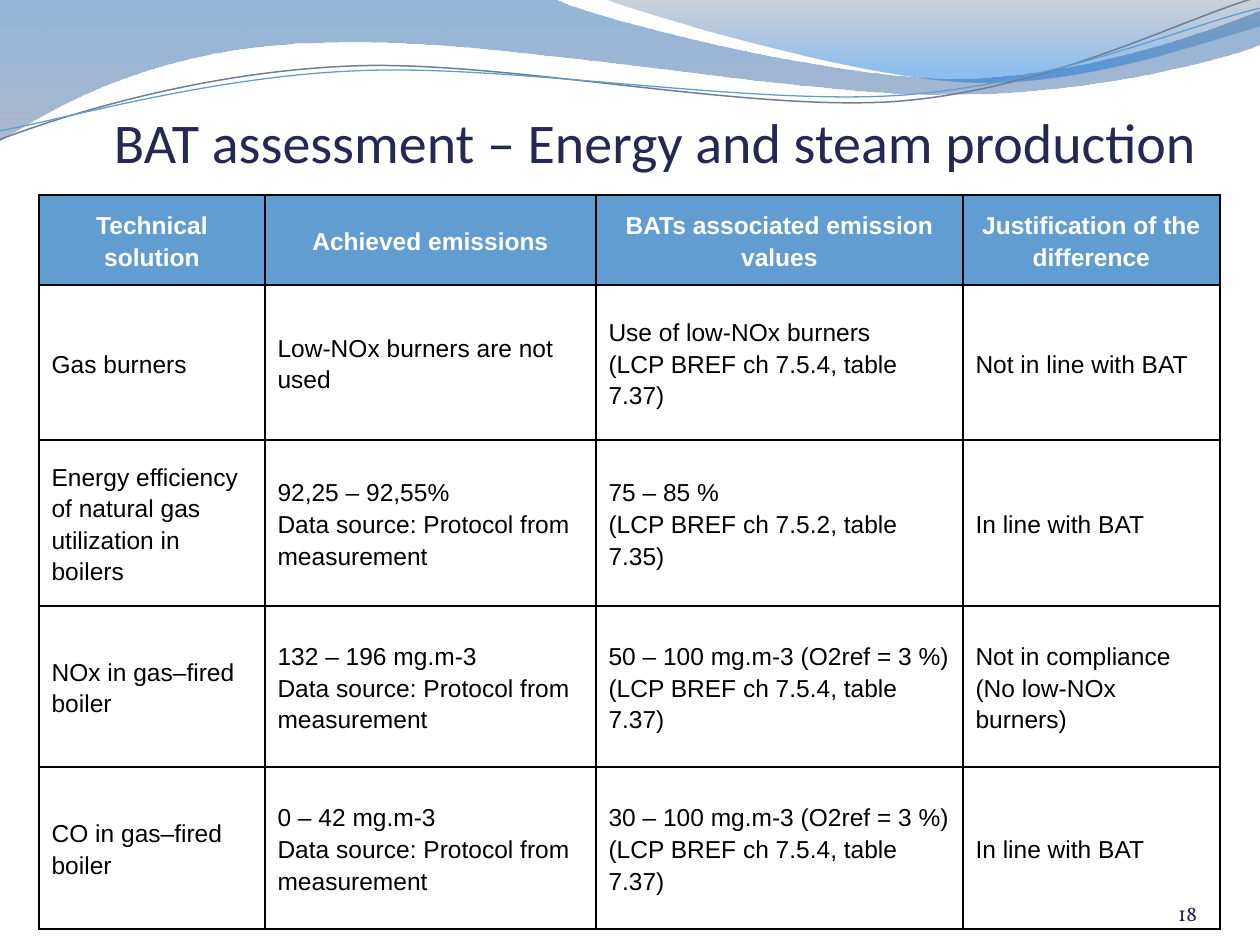
from lxml.etree import SubElement
from pptx import Presentation
from pptx.dml.color import RGBColor
from pptx.enum.text import MSO_ANCHOR, PP_ALIGN
from pptx.oxml.ns import qn
from pptx.util import Emu, Pt

HUES = {
    "title": "242852", "page": "22264E", "head": "629DD1", "white": "FFFFFF",
    "black": "000000", "deep": "125EAA", "slate": "697FA4", "ash": "596982",
    "sky": "0670DA", "grey": "707E95",
}
BANDS = [
    ((-1, -1, 1263, 144),
     [(1, 1), (555, 0), (601, 22, 838, 80, 956, 80), (1076, 80, 1208, 34, 1261, 12),
      (1262, 46), (1240, 56, 1097, 97, 941, 96), (785, 96, 482, 36, 325, 44),
      (164, 46, 59, 106, 0, 143), (1, 1)],
     [(0, "deep", 45), (1, "slate", 55)]),
    ((604, -1, 656, 88),
     [(0, 0), (37, 15, 255, 79, 365, 83), (475, 88, 607, 41, 656, 27), (656, 1)],
     [(0, "ash", 30), (0.8, "sky", 45)]),
]
LINES = [
    ((-3, 28, 1263, 89),
     [(0, 82), (61, 62, 202, 24, 353, 25), (502, 25, 748, 90, 899, 86),
      (1052, 81, 1187, 17, 1263, -1)], "grey", 0.85),
    ((-3, 38, 1264, 73),
     [(1, 63), (60, 56, 210, 19, 360, 20), (512, 20, 753, 74, 905, 70),
      (1055, 66, 1191, 14, 1265, 0)], "head", 0.75),
]
COLS = [226, 331, 367, 257]
ROWS = [90, 155, 166, 161, 162]
SOURCE = "Data source: Protocol from measurement"
BREF = "(LCP BREF ch 7.5.4, table 7.37)"
CELLS = [
    [["Technical solution"], ["Achieved emissions"],
     ["BATs associated emission values"], ["Justification of the difference"]],
    [["Gas burners"], ["Low-NOx burners are not used"],
     ["Use of low-NOx burners", BREF], ["Not in line with BAT"]],
    [["Energy efficiency of natural gas utilization in boilers"],
     ["92,25 – 92,55%", SOURCE],
     ["75 – 85 %", "(LCP BREF ch 7.5.2, table 7.35)"], ["In line with BAT"]],
    [["NOx in gas–fired boiler"], ["132 – 196 mg.m-3", SOURCE],
     ["50 – 100 mg.m-3 (O2ref = 3 %)", BREF],
     ["Not in compliance", "(No low-NOx burners)"]],
    [["CO in gas–fired boiler"], ["0 – 42 mg.m-3", SOURCE],
     ["30 – 100 mg.m-3 (O2ref = 3 %)", BREF], ["In line with BAT"]],
]


def px(num):
    return Emu(round(num * 914400 / 126))


def hue(name):
    return RGBColor.from_string(HUES[name])


def draw(slide, box, parts, close):
    left, top, width, height = box
    pen = slide.shapes.build_freeform(0, 0, scale=px(1))
    pen.add_line_segments([(width, height)], close=False)
    shape = pen.convert_to_shape(px(left), px(top))
    shape.left, shape.top, shape.width, shape.height = map(px, box)
    shape.shadow.inherit = False
    route = next(shape.element.iter(qn("a:path")))
    for node in list(route):
        route.remove(node)
    route.set("w", str(width))
    route.set("h", str(height))
    for spot, part in enumerate(parts):
        kind = "cubicBezTo" if len(part) == 6 else "lnTo" if spot else "moveTo"
        node = SubElement(route, qn("a:" + kind))
        for x, y in zip(part[::2], part[1::2]):
            SubElement(node, qn("a:pt"), x=str(x), y=str(y))
    if close:
        SubElement(route, qn("a:close"))
    return shape


def add_band(slide, box, parts, stops):
    shape = draw(slide, box, parts, True)
    shape.line.fill.background()
    shape.fill.gradient()
    shape.fill.gradient_angle = 270
    for stop, (place, name, alpha) in zip(shape.fill.gradient_stops, stops):
        stop.position = place
        stop.color.rgb = hue(name)
    tints = shape.element.spPr.iter(qn("a:srgbClr"))
    for tint, (place, name, alpha) in zip(tints, stops):
        SubElement(tint, qn("a:alpha"), val=str(alpha * 1000))


def add_line(slide, box, parts, name, width):
    shape = draw(slide, box, parts, False)
    shape.rotation = 357.3
    shape.fill.background()
    shape.line.color.rgb = hue(name)
    shape.line.width = Pt(width)


def add_run(para, text, size, font, color, bold=False):
    run = para.add_run()
    run.text = text
    run.font.size = Pt(size)
    run.font.name = font
    run.font.bold = bold
    run.font.color.rgb = hue(color)


def add_label(slide, box, text, size, font, color, align, inset=0):
    frame = slide.shapes.add_textbox(*map(px, box)).text_frame
    frame.word_wrap = True
    frame.vertical_anchor = MSO_ANCHOR.BOTTOM
    frame.margin_left = frame.margin_right = frame.margin_bottom = 0
    frame.margin_top = px(inset)
    para = frame.paragraphs[0]
    para.alignment = align
    add_run(para, text, size, font, color)


def add_edges(cell):
    props = cell._tc.get_or_add_tcPr()
    for spot, side in enumerate(("lnL", "lnR", "lnT", "lnB")):
        line = SubElement(props, qn("a:" + side), w=str(Pt(1)))
        fill = SubElement(line, qn("a:solidFill"))
        SubElement(fill, qn("a:srgbClr"), val=HUES["black"])
        props.insert(spot, line)


def fill_cell(cell, lines, head):
    cell.vertical_anchor = MSO_ANCHOR.MIDDLE
    cell.margin_left = cell.margin_right = Pt(7.2)
    cell.margin_top = cell.margin_bottom = Pt(3.6)
    if head:
        cell.fill.solid()
        cell.fill.fore_color.rgb = hue("head")
    else:
        cell.fill.background()
    frame = cell.text_frame
    for spot, text in enumerate(lines):
        para = frame.add_paragraph() if spot else frame.paragraphs[0]
        para.alignment = PP_ALIGN.CENTER if head else PP_ALIGN.LEFT
        para.line_spacing = 1.15
        add_run(para, text, 14, "Arial", "white" if head else "black", head)
    add_edges(cell)


def add_grid(slide, box):
    table = slide.shapes.add_table(len(ROWS), len(COLS), *map(px, box)).table
    table.first_row = table.horz_banding = False
    for col, width in zip(table.columns, COLS):
        col.width = px(width)
    for row, height, texts in zip(table.rows, ROWS, CELLS):
        row.height = px(height)
        for cell, lines in zip(row.cells, texts):
            fill_cell(cell, lines, texts is CELLS[0])


def main():
    deck = Presentation()
    deck.slide_width, deck.slide_height = px(1260), px(945)
    slide = deck.slides.add_slide(deck.slide_layouts[6])
    for band in BANDS:
        add_band(slide, *band)
    for line in LINES:
        add_line(slide, *line)
    add_label(slide, (114, 86, 1102, 89), "BAT assessment – Energy and steam production",
              32, "Calibri", "title", PP_ALIGN.LEFT, 6)
    add_grid(slide, (39, 195, sum(COLS), sum(ROWS)))
    add_label(slide, (1092, 876, 105, 50), "18", 12, "Vollkorn", "page", PP_ALIGN.RIGHT)
    deck.save("out.pptx")


if __name__ == "__main__":
    main()
